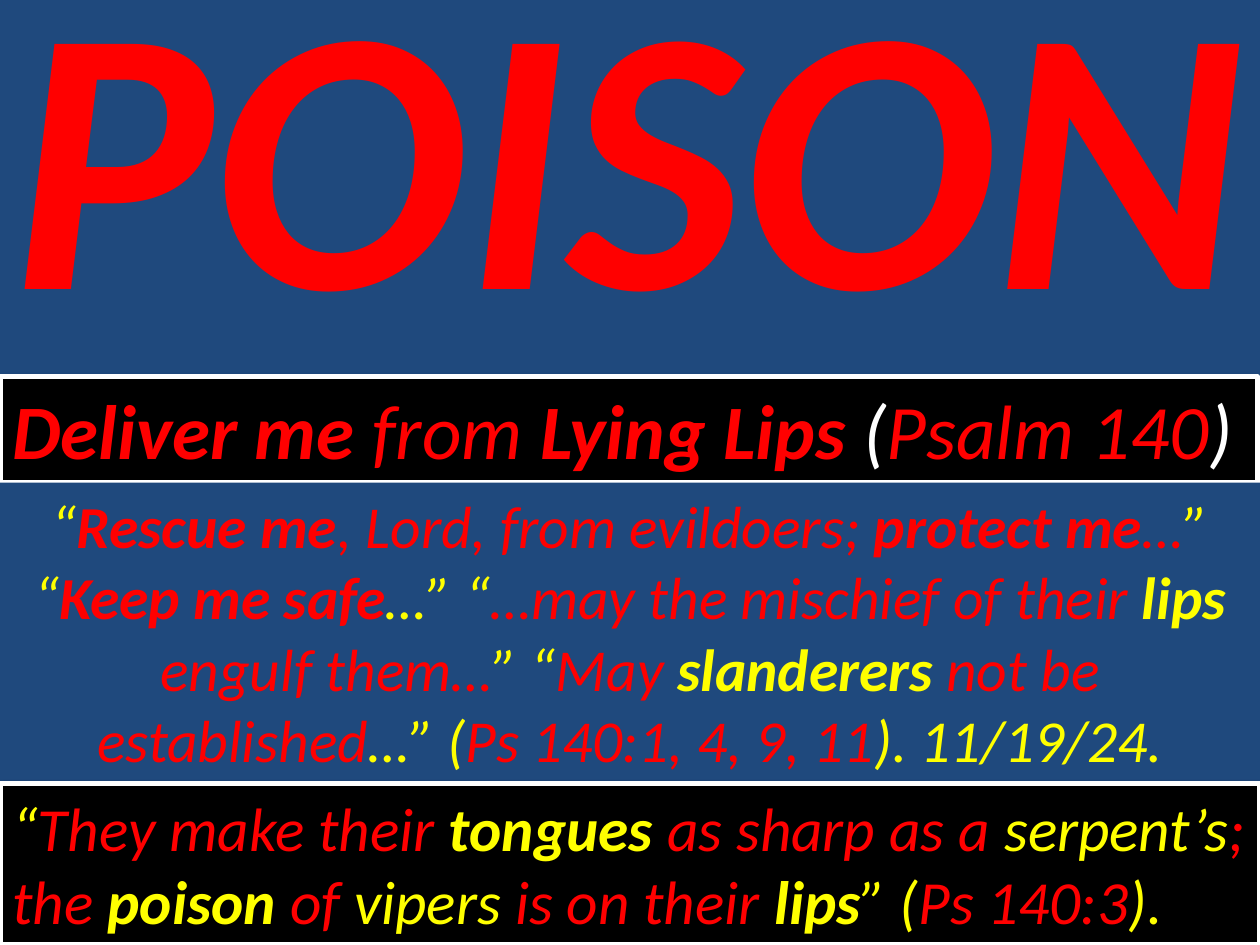
"""Build the POISON slide about Psalm 140."""
from lxml import etree
from pptx import Presentation, util as u
from pptx.dml.color import RGBColor
from pptx.enum import text
from pptx.oxml import ns

COLOURS = {"red": "FF0000", "yellow": "FFFF00", "white": "FFFFFF",
           "black": "000000", "blue": "1F497D"}
SLIDE_WIDTH, SLIDE_HEIGHT = 720, 540


class SlideBuilder:
    def __init__(self, slide, font):
        self.slide = slide
        self.font = font

    def colour(self, name):
        return RGBColor.from_string(COLOURS[name])

    def add_runs(self, shape, runs, size, centred=False, wrap=True):
        frame = shape.text_frame
        frame.word_wrap = wrap
        frame.auto_size = text.MSO_AUTO_SIZE.SHAPE_TO_FIT_TEXT
        frame.vertical_anchor = text.MSO_ANCHOR.TOP
        paragraph = frame.paragraphs[0]
        paragraph.alignment = text.PP_ALIGN.CENTER if centred else text.PP_ALIGN.LEFT
        for words, colour, bold in runs:
            run = paragraph.add_run()
            run.text = words
            run.font.name = self.font
            run.font.size = u.Pt(size)
            run.font.italic = True
            run.font.bold = bold
            run.font.color.rgb = self.colour(colour)

    def fill(self, shape, colour):
        shape.fill.solid()
        shape.fill.fore_color.rgb = self.colour(colour)

    def title(self, box, fill, runs, size):
        shape = self.slide.shapes.title
        shape.left, shape.top, shape.width, shape.height = map(u.Pt, box)
        self.fill(shape, fill)
        self.add_runs(shape, runs, size, wrap=False)

    def panel(self, box, fill, runs, size, centred=False, wrap=True):
        shape = self.slide.shapes.add_textbox(*map(u.Pt, box))
        self.fill(shape, fill)
        self.add_runs(shape, runs, size, centred, wrap)
        return shape

    def framed_panel(self, box, runs, size, wrap=True):
        shape = self.panel(box, "black", runs, size, wrap=wrap)
        shape.line.color.rgb = self.colour("white")
        shape.line.width = u.Pt(3)
        self.shadow(shape)

    def shadow(self, shape):
        properties = shape.element.spPr
        effects = etree.SubElement(properties, ns.qn("a:effectLst"))
        outer = etree.SubElement(effects, ns.qn("a:outerShdw"), blurRad=str(u.Pt(3.1)),
                                 dist=str(u.Pt(1.6)), dir="5400000", rotWithShape="0")
        colour = etree.SubElement(outer, ns.qn("a:srgbClr"), val=COLOURS["black"])
        etree.SubElement(colour, ns.qn("a:alpha"), val="38000")


def main():
    presentation = Presentation()
    presentation.slide_width = u.Pt(SLIDE_WIDTH)
    presentation.slide_height = u.Pt(SLIDE_HEIGHT)
    slide = presentation.slides.add_slide(presentation.slide_layouts[5])
    builder = SlideBuilder(slide, "Calibri")

    builder.title((0, -54, 725, 269.3), "blue", [("POISON", "red", True)], 216)
    builder.framed_panel((0, 215.3, 718.5, 60.5), [
        ("Deliver me ", "red", True), ("from", "red", False),
        (" Lying Lips ", "red", True), ("(", "white", False),
        ("Psalm 140", "red", False), (")", "white", False),
    ], 44, wrap=False)
    builder.panel((0, 275.8, SLIDE_WIDTH, 172), "blue", [
        ("“", "yellow", False), ("Rescue me", "red", True),
        (", Lord, from evildoers; ", "red", False), ("protect me", "red", True),
        ("…", "red", False), ("” “", "yellow", False),
        ("Keep me safe", "red", True), ("…” “", "yellow", False),
        ("…may the mischief of their ", "red", False), ("lips", "yellow", True),
        (" engulf them…", "red", False), ("” “", "yellow", False),
        ("May ", "red", False), ("slanderers", "yellow", True),
        (" not be established", "red", False), ("…” (", "yellow", False),
        ("Ps 140:1, 4, 9, 11", "red", False), ("). 11/19/24.", "yellow", False),
    ], 34, centred=True)
    builder.framed_panel((0, 447.8, SLIDE_WIDTH, 92.2), [
        ("“", "yellow", False), ("They make their ", "red", False),
        ("tongues", "yellow", True), (" as sharp as a ", "red", False),
        ("serpent’s", "yellow", False), ("; the ", "red", False),
        ("poison", "yellow", True), (" of ", "red", False),
        ("vipers", "yellow", False), (" is on their ", "red", False),
        ("lips", "yellow", True), ("” (", "yellow", False),
        ("Ps 140:3", "red", False), (").", "yellow", False),
    ], 35)
    presentation.save("out.pptx")


if __name__ == "__main__":
    main()
